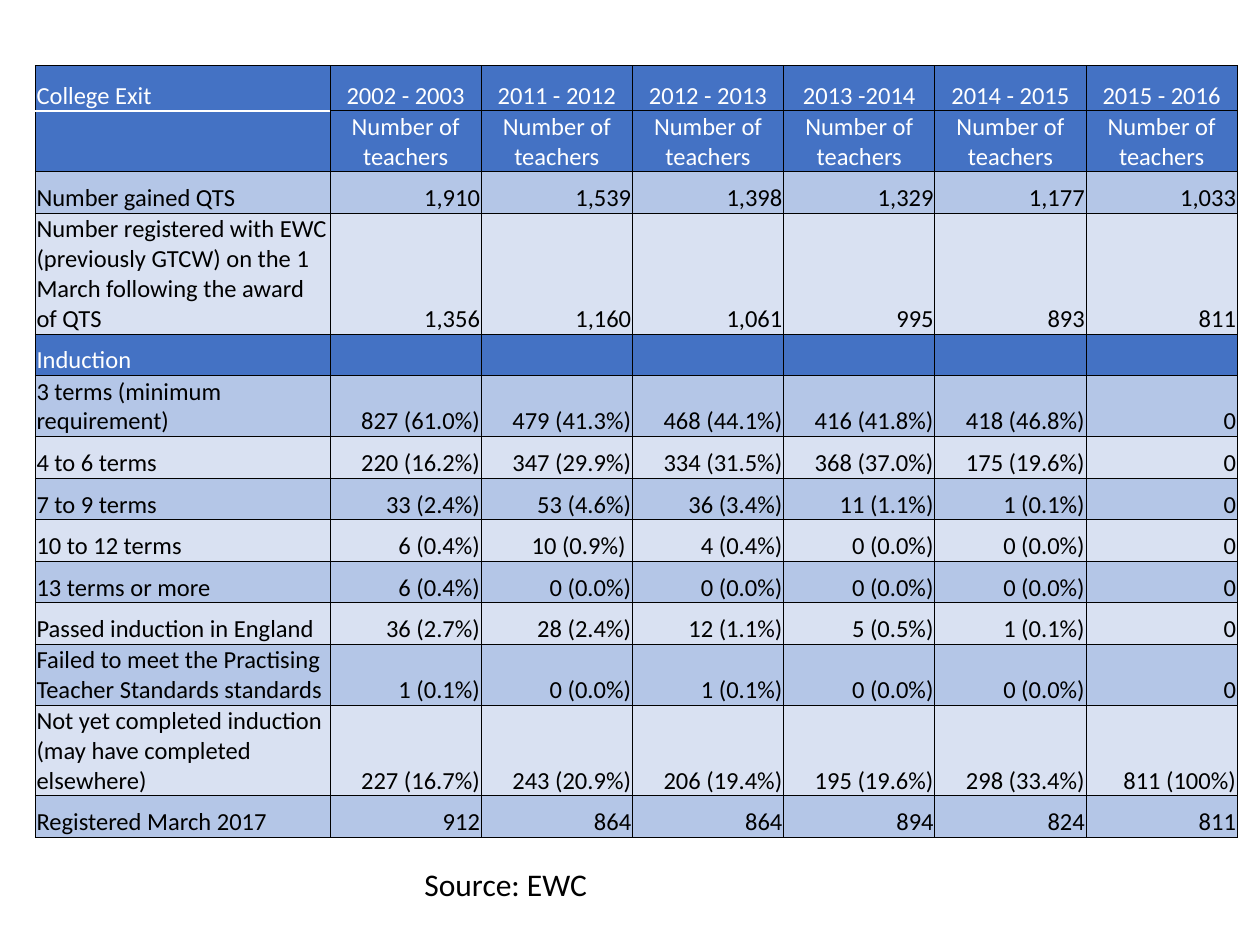
"""Build the slide with the table of teacher induction by college exit year."""
import lxml.etree
import pptx
import pptx.dml.color
import pptx.enum.text
import pptx.oxml.ns
import pptx.util

Inches = pptx.util.Inches
Align = pptx.enum.text.PP_ALIGN
BLUE, MID, PALE = "4472C4", "B4C6E7", "D9E1F2"
BLACK, WHITE = "000000", "FFFFFF"


def color(code):
    """Turn a hex string into a colour."""
    return pptx.dml.color.RGBColor.from_string(code)


def border(cell, sides):
    """Draw thin black lines on the given sides of a cell."""
    props = cell._tc.get_or_add_tcPr()
    for side in sides:
        line = lxml.etree.SubElement(props, pptx.oxml.ns.qn(f"a:ln{side}"), w=str(pptx.util.Pt(0.5)))
        fill = lxml.etree.SubElement(line, pptx.oxml.ns.qn("a:solidFill"))
        lxml.etree.SubElement(fill, pptx.oxml.ns.qn("a:srgbClr"), val=BLACK)


rows = [
    ["College Exit", "2002 - 2003", "2011 - 2012", "2012 - 2013", "2013 -2014", "2014 - 2015", "2015 - 2016"],
    [""] + ["Number of teachers"] * 6,
    ["Number gained QTS", "1,910", "1,539", "1,398", "1,329", "1,177", "1,033"],
    ["Number registered with EWC (previously GTCW) on the 1 March following the award of QTS",
     "1,356", "1,160", "1,061", "995", "893", "811"],
    ["Induction"] + [""] * 6,
    ["3 terms (minimum requirement)",
     "827 (61.0%)", "479 (41.3%)", "468 (44.1%)", "416 (41.8%)", "418 (46.8%)", "0"],
    ["4 to 6 terms", "220 (16.2%)", "347 (29.9%)", "334 (31.5%)", "368 (37.0%)", "175 (19.6%)", "0"],
    ["7 to 9 terms", "33 (2.4%)", "53 (4.6%)", "36 (3.4%)", "11 (1.1%)", "1 (0.1%)", "0"],
    ["10 to 12 terms", "6 (0.4%)", "10 (0.9%) ", "4 (0.4%)", "0 (0.0%)", "0 (0.0%)", "0"],
    ["13 terms or more", "6 (0.4%)", "0 (0.0%)", "0 (0.0%)", "0 (0.0%)", "0 (0.0%)", "0"],
    ["Passed induction in England", "36 (2.7%)", "28 (2.4%)", "12 (1.1%)", "5 (0.5%)", "1 (0.1%)", "0"],
    ["Failed to meet the Practising Teacher Standards standards",
     "1 (0.1%)", "0 (0.0%)", "1 (0.1%)", "0 (0.0%)", "0 (0.0%)", "0"],
    ["Not yet completed induction (may have completed elsewhere)",
     "227 (16.7%)", "243 (20.9%)", "206 (19.4%)", "195 (19.6%)", "298 (33.4%)", "811 (100%)"],
    ["Registered March 2017", "912", "864", "864", "894", "824", "811"],
]
heads = (0, 1, 4)
tall = {0: 0.36, 1: 0.45, 3: 0.49}
edges = {(0, 0): "LRT", (1, 0): "LRB"}

deck = pptx.Presentation()
deck.slide_width, deck.slide_height = Inches(10), Inches(7.5)
slide = deck.slides.add_slide(deck.slide_layouts[6])

frame = slide.shapes.add_table(len(rows), 7, Inches(0.28), Inches(0.52), Inches(9.53), Inches(6.08))
table = frame.table
table.first_row = table.horz_banding = False
for c, column in enumerate(table.columns):
    column.width = Inches(1.2 if c else 2.34)

band = 0
for r, values in enumerate(rows):
    table.rows[r].height = Inches(tall.get(r, 0.33))
    if r in heads:
        shade, ink, band = BLUE, WHITE, 0
    else:
        shade, ink = (MID, PALE)[band % 2], BLACK
        band += 1
    for c, value in enumerate(values):
        cell = table.cell(r, c)
        border(cell, edges.get((r, c), "LRTB"))
        cell.fill.solid()
        cell.fill.fore_color.rgb = color(shade)
        cell.vertical_anchor = pptx.enum.text.MSO_ANCHOR.BOTTOM
        cell.margin_left = cell.margin_right = cell.margin_top = Inches(0.01)
        cell.margin_bottom = 0
        cell.text_frame.text = value
        para = cell.text_frame.paragraphs[0]
        if c:
            para.alignment = Align.CENTER if r in heads else Align.RIGHT
        for run in para.runs:
            run.font.name, run.font.size = "Calibri", pptx.util.Pt(14)
            run.font.color.rgb = color(ink)

note = slide.shapes.add_textbox(Inches(3.27), Inches(6.82), Inches(3.78), Inches(0.4)).text_frame
note.word_wrap = True
note.auto_size = pptx.enum.text.MSO_AUTO_SIZE.SHAPE_TO_FIT_TEXT
note.text = "Source: EWC"
font = note.paragraphs[0].runs[0].font
font.name, font.size = "Calibri", pptx.util.Pt(18)
font.color.rgb = color(BLACK)

deck.save("out.pptx")
